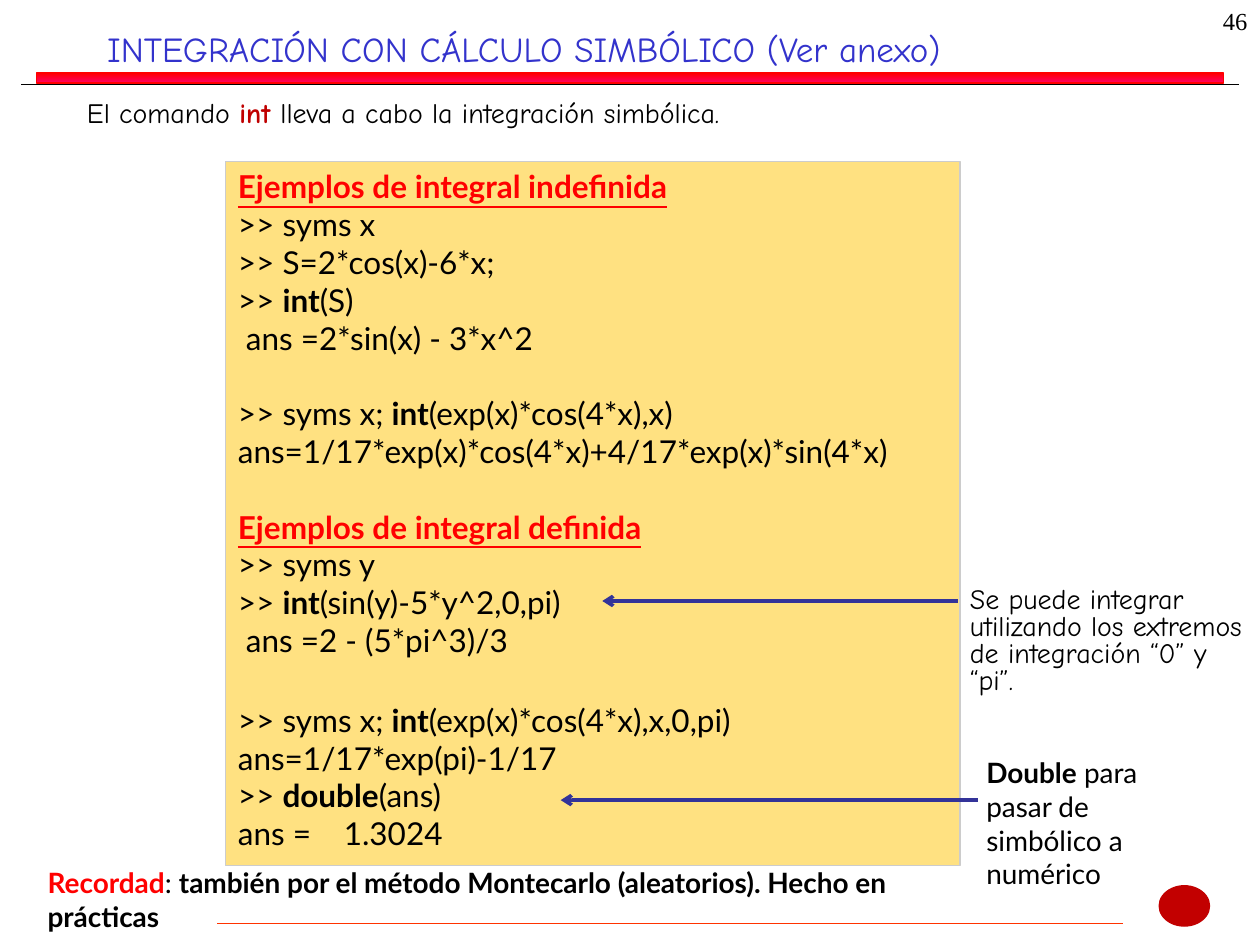
from dataclasses import dataclass

from lxml import etree
from pptx import Presentation
from pptx import util as u
from pptx.dml.color import RGBColor
from pptx.enum import shapes, text
from pptx.oxml.ns import qn


@dataclass(frozen=True)
class Theme:
    black: str = "000000"
    title: str = "3333CC"
    red: str = "FF0000"
    pink: str = "FF0066"
    keyword: str = "C00000"
    emblem: str = "C20000"
    rule: str = "FF3300"
    arrow: str = "333399"
    panel: str = "FFE181"
    panel_line: str = "CCCCCC"
    hand: str = "Comic Neue"
    sans: str = "Lato"
    serif: str = "Times New Roman"
    title_size: int = 20
    code_size: int = 18
    note_size: int = 16
    number_size: int = 14


def rgb(value):
    return RGBColor.from_string(value)


def bold(words, color=None):
    return words, True, color, False


def heading(words, color):
    return words, True, color, True


class SlideBuilder:
    """Holds the theme and the current slide."""

    def __init__(self, slide, theme):
        self.slide = slide
        self.theme = theme

    def place(self, shape, left, top, width, height):
        shape.left, shape.top = u.Inches(left), u.Inches(top)
        shape.width, shape.height = u.Inches(width), u.Inches(height)

    def fill_text(self, shape, paragraphs, font, size, color=None, spacing=None,
                  align=text.PP_ALIGN.LEFT):
        """Each paragraph is a list of plain strings and styled spans."""
        frame = shape.text_frame
        frame.word_wrap = True
        frame.auto_size = text.MSO_AUTO_SIZE.NONE
        frame.vertical_anchor = text.MSO_ANCHOR.TOP
        for index, spans in enumerate(paragraphs):
            para = frame.paragraphs[0] if index == 0 else frame.add_paragraph()
            para.alignment = align
            para.space_before = u.Pt(0)
            if spacing:
                para.line_spacing = spacing
            for item in spans:
                if isinstance(item, str):
                    item = (item, False, None, False)
                words, is_bold, own_color, underlined = item
                span = para.add_run()
                span.text = words
                span.font.name, span.font.size = font, u.Pt(size)
                span.font.bold, span.font.underline = is_bold, underlined
                span.font.color.rgb = rgb(own_color or color or self.theme.black)
        return frame

    def placeholder(self, index, area, paragraphs, **style):
        shape = self.slide.placeholders[index]
        self.place(shape, *area)
        frame = self.fill_text(shape, paragraphs, **style)
        for para in frame.paragraphs:
            properties = para._p.get_or_add_pPr()
            properties.set("marL", "0")
            properties.set("indent", "0")
            etree.SubElement(properties, qn("a:buNone"))

    def text_box(self, area, paragraphs, **style):
        box = self.slide.shapes.add_textbox(*map(u.Inches, area))
        return self.fill_text(box, paragraphs, **style)

    def block(self, area, fill, line, kind=shapes.MSO_SHAPE.RECTANGLE):
        shape = self.slide.shapes.add_shape(kind, *map(u.Inches, area))
        shape.shadow.inherit = False
        if isinstance(fill, tuple):
            shape.fill.gradient()
            shape.fill.gradient_angle = 270
            for stop, color in zip(shape.fill.gradient_stops, fill):
                stop.color.rgb = rgb(color)
        else:
            shape.fill.solid()
            shape.fill.fore_color.rgb = rgb(fill)
        shape.line.color.rgb = rgb(line)
        shape.line.width = u.Pt(0.75)
        return shape

    def line(self, start, end, color, width, arrow=False):
        connector = self.slide.shapes.add_connector(
            shapes.MSO_CONNECTOR.STRAIGHT, *map(u.Inches, start + end))
        connector.line.color.rgb = rgb(color)
        connector.line.width = u.Pt(width)
        if arrow:
            etree.SubElement(connector.line._get_or_add_ln(),
                             qn("a:tailEnd"), type="arrow")
        etree.SubElement(connector._element.spPr, qn("a:effectLst"))


def main():
    theme = Theme()
    deck = Presentation()
    deck.slide_width, deck.slide_height = u.Inches(10), u.Inches(7.5)
    page = SlideBuilder(deck.slides.add_slide(deck.slide_layouts[1]), theme)
    note = {"font": theme.hand, "size": theme.note_size, "spacing": 0.8}
    remark = {"font": theme.sans, "size": theme.note_size}

    # Header bar, rules and corner emblem
    page.block((0.29, 0.58, 9.42, 0.08), (theme.red, theme.pink), theme.red)
    page.line((0.17, 0.67), (9.83, 0.67), theme.black, 0.75)
    page.line((8.91, 7.33), (1.72, 7.33), theme.rule, 1)
    page.block((9.2, 7.03, 0.4, 0.32), theme.emblem, theme.emblem,
               shapes.MSO_SHAPE.OVAL)

    # Page number, title and introduction
    page.text_box((9, 0, 1, 0.33), [["46"]], font=theme.serif,
                  size=theme.number_size, align=text.PP_ALIGN.RIGHT)
    page.placeholder(0, (0.75, 0.17, 9.05, 0.35),
                     [["INTEGRACIÓN CON CÁLCULO SIMBÓLICO (Ver anexo)"]],
                     font=theme.hand, size=theme.title_size, color=theme.title)
    page.placeholder(1, (0.59, 0.76, 7.95, 0.45),
                     [["El comando ", bold("int ", theme.keyword),
                       "lleva a cabo la integración simbólica."]], **note)

    # Code panel: groups are separated by space before their first line
    groups = [
        (0, [[heading("Ejemplos de integral indefinida", theme.red)],
             [">> syms x"],
             [">> S=2*cos(x)-6*x;"],
             [">> ", bold("int"), "(S)"],
             [" ans =2*sin(x) - 3*x^2"]]),
        (21.6, [[">> syms x; ", bold("int"), "(exp(x)*cos(4*x),x)"],
                ["ans=1/17*exp(x)*cos(4*x)+4/17*exp(x)*sin(4*x)"]]),
        (21.6, [[heading("Ejemplos de integral definida", theme.red)],
                [">> syms y"],
                [">> ", bold("int"), "(sin(y)-5*y^2,0,pi)"],
                [" ans =2 - (5*pi^3)/3"]]),
        (24, [[">> syms x; ", bold("int"), "(exp(x)*cos(4*x),x,0,pi)"],
              ["ans=1/17*exp(pi)-1/17"],
              [">> ", bold("double"), "(ans)"],
              ["ans =\t1.3024"]]),
    ]
    panel = page.block((1.79, 1.28, 5.83, 5.59), theme.panel, theme.panel_line)
    code = page.fill_text(panel, [row for _, rows in groups for row in rows],
                          font=theme.sans, size=theme.code_size)
    first = 0
    for gap, rows in groups:
        code.paragraphs[first].space_before = u.Pt(gap)
        first += len(rows)
    stops = etree.SubElement(code.paragraphs[-1]._p.get_or_add_pPr(),
                             qn("a:tabLst"))
    etree.SubElement(stops, qn("a:tab"), pos=str(u.Inches(0.84)), algn="l")

    # Side notes with their arrows
    page.line((7.6, 4.77), (4.78, 4.77), theme.arrow, 2, arrow=True)
    page.text_box((7.6, 4.62, 2.4, 0.87),
                  [["Se puede integrar utilizando los extremos "
                    "de integración “0” y “pi”."]], **note)
    page.line((7.76, 6.35), (4.45, 6.35), theme.arrow, 2, arrow=True)
    page.text_box((7.73, 5.95, 1.5, 1.18),
                  [[bold("Double"), " para pasar de simbólico a numérico"]],
                  **remark)

    # Closing reminder
    page.text_box((0.28, 6.82, 7.58, 0.63),
                  [[bold("Recordad", theme.red), ": ",
                    bold("también por el método Montecarlo (aleatorios). "
                         "Hecho en prácticas")]], **remark)

    deck.save("out.pptx")


if __name__ == "__main__":
    main()
